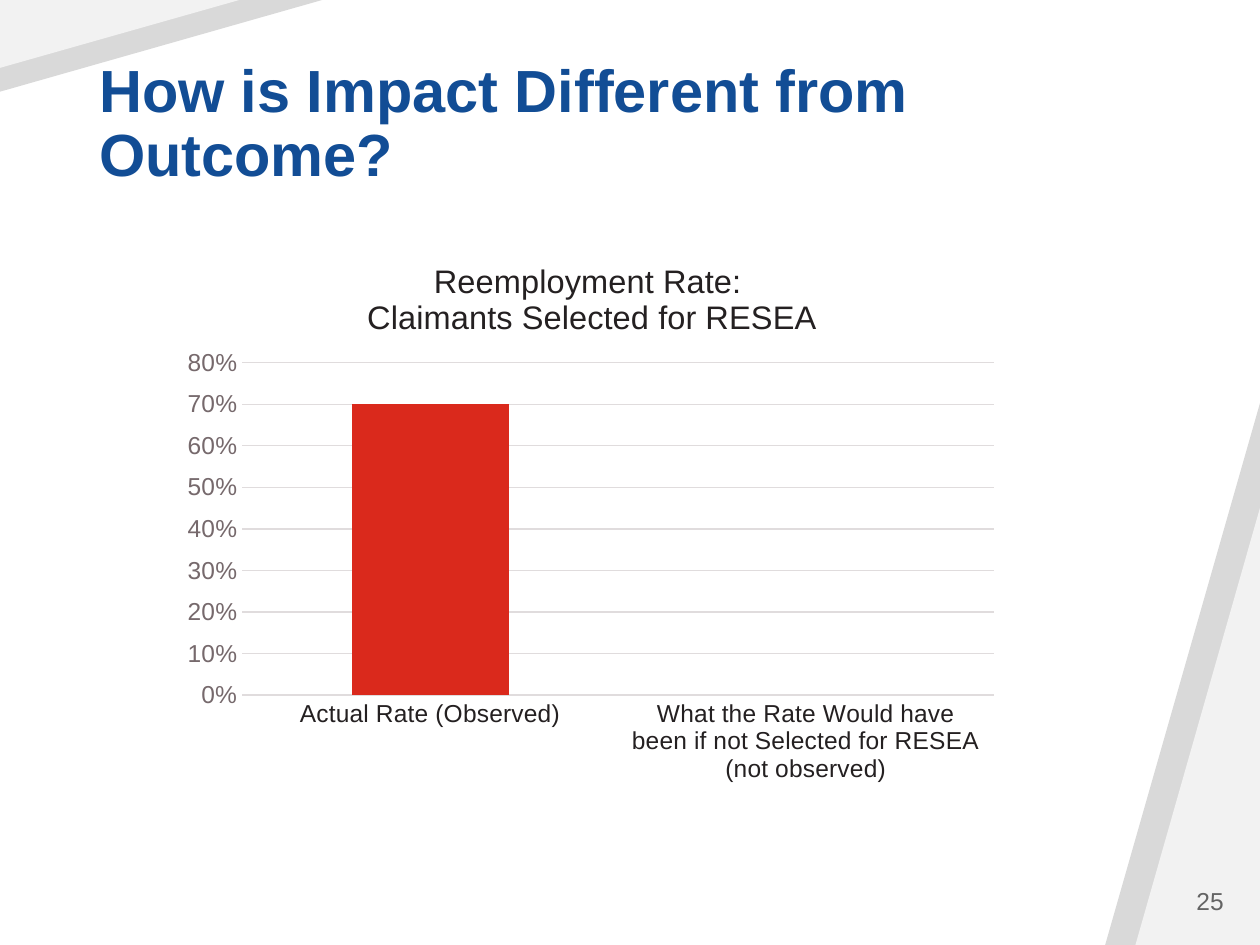
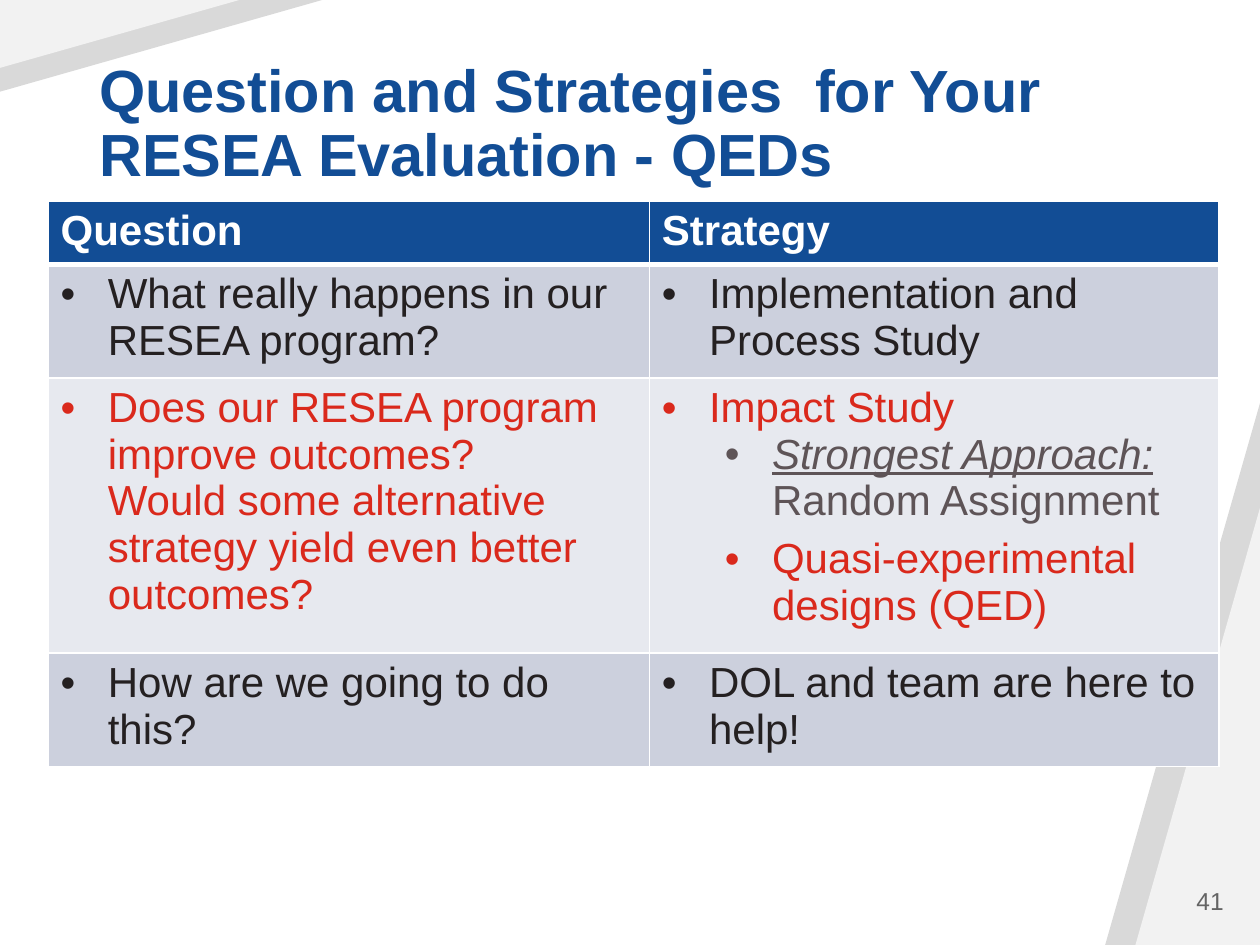
from lxml.etree import SubElement
from pptx import Presentation
from pptx.chart.data import CategoryChartData
from pptx.dml.color import RGBColor
from pptx.enum.chart import XL_CHART_TYPE, XL_TICK_MARK
from pptx.enum.shapes import MSO_SHAPE
from pptx.enum.text import MSO_ANCHOR, PP_ALIGN
from pptx.oxml.ns import qn
from pptx.oxml.xmlchemy import OxmlElement
from pptx.util import Cm, Pt

FONT = "Arial"
BLUE, RED, WHITE = "124D95", "DA291C", "FFFFFF"
INK, GREY, TAUPE, AXIS_GREY = "242021", "646464", "5E5457", "76696C"
GRID, BAND, PALE_BAND = "E0DCDD", "CCD0DD", "E7E9EF"
SLIDE_WIDTH, SLIDE_HEIGHT = 25.4, 19.05

WEDGES = [("D9D9D9", (3.12, 10.92), (1.85, 6.5)),
          ("F2F2F2", (2.51, 8.81), (1.37, 4.83))]

TITLE_BOX = (1.75, 1.02, 22.1, 2.92)
NUMBER_BOX = (21.36, 17.65, 3.56, 1.02)
TITLE_FORMAT = {"size": 34, "bold": True, "color": BLUE}
NUMBER_FORMAT = {"size": 14, "color": GREY}

CHART_BOX = (3.43, 4.72, 16.94, 11.28)
CHART_TITLE = ["Reemployment Rate: ", "Claimants Selected for RESEA"]
REEMPLOYMENT_RATES = {
    "Actual Rate (Observed)": 0.7,
    "What the Rate Would have been if not Selected for RESEA (not observed)": None,
}
TITLE_LAYOUT = {"x": 0.23, "y": 0.04}
PLOT_LAYOUT = {"x": 0.086, "y": 0.23, "w": 0.894, "h": 0.594}

TABLE_CORNER = (0.97, 4.06)
COLUMN_WIDTHS = [12.12, 11.48]
HEADER = {"size": 24, "bold": True, "color": WHITE}
PLAIN = {"size": 24, "bold": False, "color": INK}
ALERT = {**PLAIN, "color": RED}
MUTED = {**PLAIN, "color": TAUPE}
STRESSED = {**MUTED, "italic": True, "underline": True}

TABLE_ROWS = [
    (1.17, BLUE, [
        [(None, 0, [("Question", HEADER)])],
        [(None, 0, [("Strategy", HEADER)])],
    ]),
    (2.13, BAND, [
        [(0, 0, [("What really happens in our RESEA program?", PLAIN)])],
        [(0, 0, [("Implementation and Process Study", PLAIN)])],
    ]),
    (5.21, PALE_BAND, [
        [(0, 0, [("Does our RESEA program improve outcomes?\n"
                  "Would some alternative strategy yield even better outcomes?", ALERT)])],
        [(0, 0, [("Impact Study", ALERT)]),
         (1, 0, [("Strongest Approach: ", STRESSED), ("Random Assignment", MUTED)]),
         (1, 6, [("Quasi-experimental designs (QED)", ALERT)])],
    ]),
    (2.13, BAND, [
        [(0, 0, [("How are we going to do this?", PLAIN)])],
        [(0, 0, [("DOL and team are here to help!", PLAIN)])],
    ]),
]


def rgb(color):
    return RGBColor.from_string(color)


def lengths(values):
    return [Cm(value) for value in values]


def apply_font(font, values):
    font.name = FONT
    for name, value in values.items():
        if name == "color":
            font.color.rgb = rgb(value)
        else:
            setattr(font, name, Pt(value) if name == "size" else value)


def add_run(paragraph, text, values):
    for index, line in enumerate(text.split("\n")):
        if index:
            paragraph.add_line_break()
        run = paragraph.add_run()
        run.text = line
        apply_font(run.font, values)


def add_text(slide, box, text, values, anchor, **paragraph_format):
    frame = slide.shapes.add_textbox(*lengths(box)).text_frame
    frame.word_wrap = True
    frame.vertical_anchor = anchor
    paragraph = frame.paragraphs[0]
    for name, value in paragraph_format.items():
        setattr(paragraph, name, value)
    add_run(paragraph, text, values)


def add_wedge(slide, box, color):
    shape = slide.shapes.add_shape(MSO_SHAPE.ISOSCELES_TRIANGLE, *lengths(box))
    shape.adjustments[0] = 1
    shape.shadow.inherit = False
    shape.fill.solid()
    shape.fill.fore_color.rgb = rgb(color)
    shape.line.fill.background()
    return shape


def add_slide(presentation, title, number):
    slide = presentation.slides.add_slide(presentation.slide_layouts[6])
    for color, (width, height), _ in WEDGES:
        add_wedge(slide, (SLIDE_WIDTH - width, SLIDE_HEIGHT - height, width, height), color)
    for color, _, (width, height) in WEDGES:
        offset = (height - width) / 2
        shape = add_wedge(slide, (offset, -offset, width, height), color)
        shape.rotation = 270
        shape._element.spPr.find(qn("a:xfrm")).set("flipV", "1")
    add_text(slide, TITLE_BOX, title, TITLE_FORMAT, MSO_ANCHOR.BOTTOM, line_spacing=0.9)
    add_text(slide, NUMBER_BOX, number, NUMBER_FORMAT, MSO_ANCHOR.MIDDLE,
             alignment=PP_ALIGN.RIGHT)
    return slide


def set_layout(parent, index, values, inner=False):
    layout = parent.find(qn("c:layout"))
    if layout is None:
        layout = OxmlElement("c:layout")
        parent.insert(index, layout)
    manual = SubElement(layout, qn("c:manualLayout"))
    settings = {"layoutTarget": "inner"} if inner else {}
    settings.update({f"{name}Mode": "edge" for name in "xy"})
    settings.update(values)
    for name, value in settings.items():
        SubElement(manual, qn(f"c:{name}")).set("val", str(value))


def add_rate_chart(slide):
    data = CategoryChartData(number_format="0%")
    data.categories = list(REEMPLOYMENT_RATES)
    data.add_series("Series 1", list(REEMPLOYMENT_RATES.values()))
    chart = slide.shapes.add_chart(
        XL_CHART_TYPE.COLUMN_CLUSTERED, *lengths(CHART_BOX), data).chart
    chart.has_legend = False
    apply_font(chart.font, {"size": 10, "color": INK})

    chart_title = chart.chart_title
    frame = chart_title.text_frame
    for index, line in enumerate(CHART_TITLE):
        paragraph = frame.add_paragraph() if index else frame.paragraphs[0]
        add_run(paragraph, line, {"size": 18.6, "bold": False, "color": INK})
    chart_title.include_in_layout = False
    set_layout(chart_title._element, 1, TITLE_LAYOUT)
    set_layout(chart._chartSpace.chart.plotArea, 0, PLOT_LAYOUT, inner=True)

    plot = chart.plots[0]
    plot.gap_width, plot.overlap, plot.vary_by_categories = 139, -27, False
    fill = plot.series[0].format.fill
    fill.solid()
    fill.fore_color.rgb = rgb(RED)

    value_axis, category_axis = chart.value_axis, chart.category_axis
    for axis, color in ((category_axis, INK), (value_axis, AXIS_GREY)):
        axis.major_tick_mark = axis.minor_tick_mark = XL_TICK_MARK.NONE
        apply_font(axis.tick_labels.font, {"size": 14, "color": color})
    for name, value in {"minimum_scale": 0, "maximum_scale": 0.8, "major_unit": 0.1}.items():
        setattr(value_axis, name, value)
    value_axis.tick_labels.number_format = "0%"
    value_axis.tick_labels.number_format_is_linked = False
    value_axis.format.line.fill.background()
    for line in (category_axis.format.line, value_axis.major_gridlines.format.line):
        line.color.rgb = rgb(GRID)
        line.width = Pt(0.75)


def set_borders(cell, widths):
    properties = cell._tc.get_or_add_tcPr()
    for index, (side, width) in enumerate(widths.items()):
        line = OxmlElement(f"a:ln{side}")
        line.set("w", str(Pt(width)))
        SubElement(SubElement(line, qn("a:solidFill")), qn("a:srgbClr")).set("val", WHITE)
        properties.insert(index, line)


def add_bullet(paragraph, level):
    properties = paragraph._p.get_or_add_pPr()
    properties.set("marL", str(Cm(0.95 + 1.27 * level)))
    properties.set("indent", str(Cm(-0.95)))
    SubElement(properties, qn("a:buFont")).set("typeface", FONT)
    SubElement(properties, qn("a:buChar")).set("char", "•")


def fill_cell(cell, paragraphs, color):
    cell.fill.solid()
    cell.fill.fore_color.rgb = rgb(color)
    set_borders(cell, {"L": 1, "R": 1, "T": 1, "B": 3 if color == BLUE else 1})
    frame = cell.text_frame
    for index, (level, space, runs) in enumerate(paragraphs):
        paragraph = frame.add_paragraph() if index else frame.paragraphs[0]
        if level is not None:
            add_bullet(paragraph, level)
        if space:
            paragraph.space_before = Pt(space)
        for text, values in runs:
            add_run(paragraph, text, values)


def add_strategy_table(slide):
    heights = [height for height, _, _ in TABLE_ROWS]
    size = (sum(COLUMN_WIDTHS), sum(heights))
    table = slide.shapes.add_table(
        len(TABLE_ROWS), len(COLUMN_WIDTHS), *lengths(TABLE_CORNER + size)).table
    for column, width in zip(table.columns, COLUMN_WIDTHS):
        column.width = Cm(width)
    for row, (height, color, cells) in zip(table.rows, TABLE_ROWS):
        row.height = Cm(height)
        for cell, paragraphs in zip(row.cells, cells):
            fill_cell(cell, paragraphs, color)


def main():
    presentation = Presentation()
    presentation.slide_width, presentation.slide_height = lengths((SLIDE_WIDTH, SLIDE_HEIGHT))
    add_rate_chart(add_slide(presentation, "How is Impact Different from Outcome?", "25"))
    add_strategy_table(add_slide(
        presentation, "Question and Strategies  for Your RESEA Evaluation - QEDs", "41"))
    presentation.save("out.pptx")


if __name__ == "__main__":
    main()
